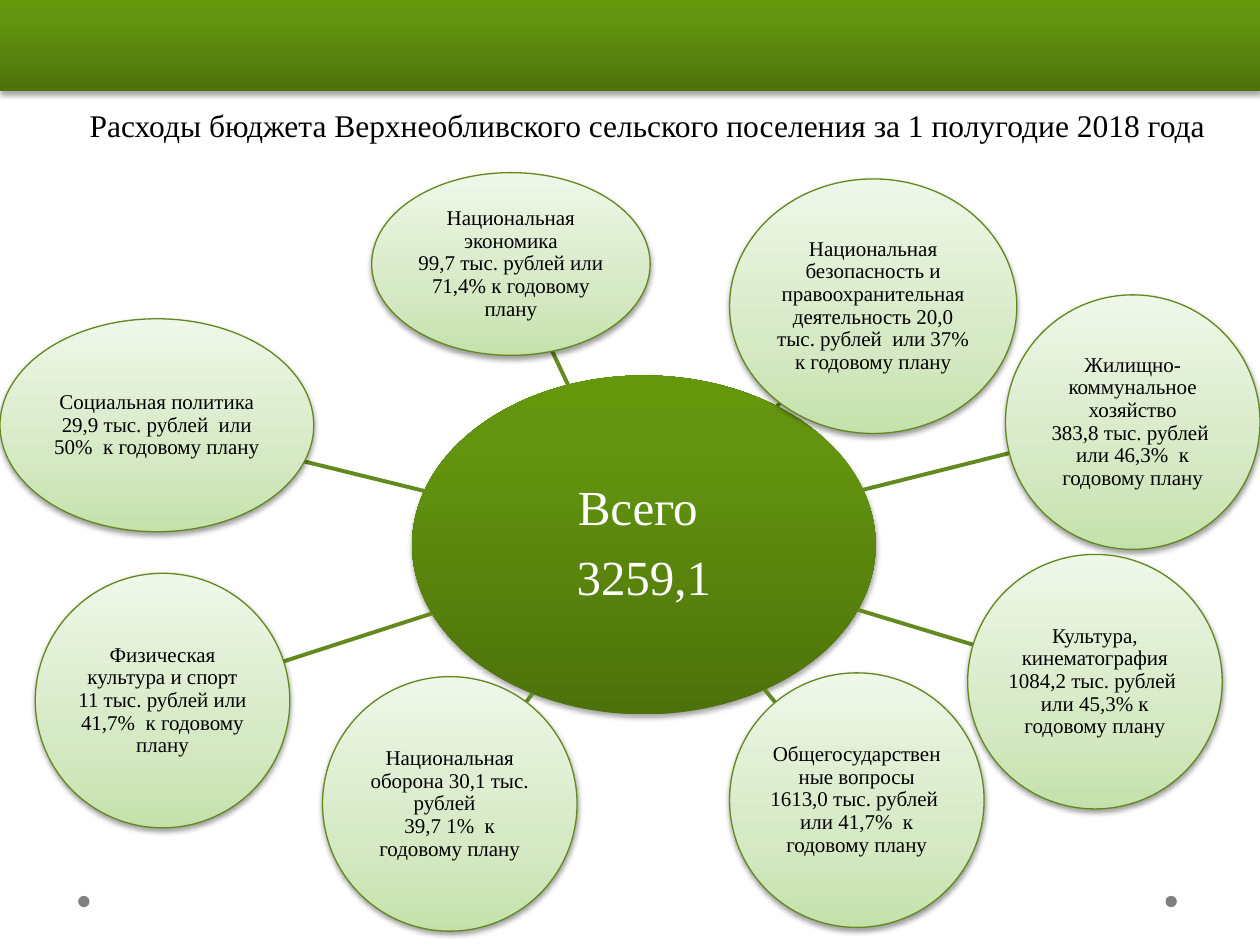
import math

import lxml.etree
import pptx
import pptx.dml.color
import pptx.enum.shapes
import pptx.enum.text
import pptx.oxml.ns
import pptx.util
from pptx.util import Inches

COLORS = {
    "dark": "4D720B", "mid": "64940F", "bright": "65970C",
    "leaf": "C5E1AB", "mist": "D6E9C5", "pale": "EFF7E9",
    "outline": "62891C", "spoke": "63891F",
    "dot": "808080", "text": "000000", "white": "FFFFFF",
}
GREEN = [(0, "dark"), (80, "mid"), (100, "bright")]
LIGHT = [(0, "leaf"), (35, "mist"), (100, "pale")]
FONT = "Times New Roman"
SHAPES = pptx.enum.shapes.MSO_SHAPE
ANCHORS = pptx.enum.text.MSO_ANCHOR

HUB = (3.27, 2.98, 3.68, 2.69)
BUBBLES = [
    ((2.95, 1.37, 2.21, 1.45),
     ["Национальная экономика", "99,7 тыс. рублей или 71,4% к годовому плану"]),
    ((5.79, 1.42, 2.28, 2.02),
     ["Национальная безопасность и правоохранительная деятельность 20,0 тыс. рублей  "
      "или 37% к годовому плану"]),
    ((7.98, 2.34, 2.02, 2.02),
     ["Жилищно-коммунальное хозяйство", "383,8 тыс. рублей  или 46,3%  к годовому плану"]),
    ((7.68, 4.4, 2.02, 2.02),
     ["Культура, кинематография", "1084,2 тыс. рублей  или 45,3% к годовому плану"]),
    ((5.79, 5.34, 2.02, 2.02),
     ["Общегосударственные вопросы", "1613,0 тыс. рублей  или 41,7%  к годовому плану"]),
    ((2.56, 5.37, 2.02, 2.02),
     ["Национальная оборона 30,1 тыс. рублей  ", "39,7 1%  к годовому плану"]),
    ((0.28, 4.55, 2.02, 2.02),
     ["Физическая культура и спорт", "11 тыс. рублей или 41,7%  к годовому плану"]),
    ((0, 2.53, 2.49, 1.69),
     ["Социальная политика", "29,9 тыс. рублей  или 50%  к годовому плану"]),
]


def rgb(name):
    return pptx.dml.color.RGBColor.from_string(COLORS[name])


def add_xml(parent, tag, **attributes):
    return lxml.etree.SubElement(parent, pptx.oxml.ns.qn(tag), attributes)


def add_color(parent, name):
    return add_xml(parent, "a:srgbClr", val=COLORS[name])


def fill_gradient(shape, stops):
    """Fill from the bottom up with any number of (percent, colour) stops."""
    shape.fill.gradient()
    shape.fill.gradient_angle = 90
    stop_list = shape._element.spPr.find(".//" + pptx.oxml.ns.qn("a:gsLst"))
    for stop in list(stop_list):
        stop_list.remove(stop)
    for percent, color in stops:
        add_color(add_xml(stop_list, "a:gs", pos=str(percent * 1000)), color)


def add_shadow(shape, distance, opacity):
    effects = shape._element.spPr.find(pptx.oxml.ns.qn("a:effectLst"))
    shadow = add_xml(effects, "a:outerShdw", blurRad=str(pptx.util.Pt(3.1)),
                     dist=str(pptx.util.Pt(distance)), dir="5400000", rotWithShape="0")
    add_xml(add_color(shadow, "text"), "a:alpha", val=str(opacity * 1000))


def add_plain_shape(slide, kind, bounds):
    shape = slide.shapes.add_shape(kind, *map(Inches, bounds))
    shape.shadow.inherit = False
    shape.line.fill.background()
    return shape


def add_green_shape(slide, kind, bounds):
    shape = add_plain_shape(slide, kind, bounds)
    fill_gradient(shape, GREEN)
    add_shadow(shape, 1.8, 35)
    return shape


def write_text(box, lines, size, color="text", spacing=1.0, gap=0, anchor=ANCHORS.MIDDLE,
               inset=None):
    frame = box.text_frame
    formats = {"word_wrap": True, "vertical_anchor": anchor}
    if inset is not None:
        sides = ("left", "right", "top", "bottom")
        formats.update({f"margin_{side}": Inches(inset) for side in sides})
    for name, value in formats.items():
        setattr(frame, name, value)
    for index, line in enumerate(lines):
        para = frame.paragraphs[0] if index == 0 else frame.add_paragraph()
        para.alignment = pptx.enum.text.PP_ALIGN.CENTER
        para.line_spacing = spacing
        if index < len(lines) - 1:
            para.space_after = pptx.util.Pt(gap)
        span = para.add_run()
        span.text = line
        for name, value in {"name": FONT, "size": pptx.util.Pt(size)}.items():
            setattr(span.font, name, value)
        span.font.color.rgb = rgb(color)


def center(bounds):
    left, top, width, height = bounds
    return left + width / 2, top + height / 2


def edge_point(bounds, target):
    """Point where the ray from an ellipse's centre to target leaves the ellipse."""
    x, y = center(bounds)
    dx, dy = target[0] - x, target[1] - y
    reach = 1 / math.hypot(dx / (bounds[2] / 2), dy / (bounds[3] / 2))
    return x + dx * reach, y + dy * reach


def add_spoke(slide, bounds):
    ends = edge_point(HUB, center(bounds)) + edge_point(bounds, center(HUB))
    spoke = slide.shapes.add_connector(
        pptx.enum.shapes.MSO_CONNECTOR.STRAIGHT, *map(Inches, ends))
    spoke.line.color.rgb = rgb("spoke")
    spoke.line.width = pptx.util.Pt(2.25)
    add_xml(spoke._element.spPr, "a:effectLst")


def add_bubble(slide, bounds, lines):
    bubble = add_plain_shape(slide, SHAPES.OVAL, bounds)
    fill_gradient(bubble, LIGHT)
    bubble.line.color.rgb = rgb("outline")
    bubble.line.width = pptx.util.Pt(0.75)
    add_shadow(bubble, 1.6, 38)
    write_text(bubble, lines, 12, spacing=0.9, inset=0.01)


def add_dot(slide, left):
    dot = add_plain_shape(slide, SHAPES.OVAL, (left, 7.11, 0.09, 0.09))
    dot.fill.solid()
    dot.fill.fore_color.rgb = rgb("dot")


def add_title(slide, text):
    box = slide.shapes.add_textbox(*map(Inches, (0.28, 0.72, 9.72, 0.47)))
    write_text(box, [text], 18, anchor=ANCHORS.BOTTOM)


def main():
    deck = pptx.Presentation()
    deck.slide_width, deck.slide_height = Inches(10), Inches(7.5)
    slide = deck.slides.add_slide(deck.slide_layouts[6])
    for left in (0.62, 9.25):
        add_dot(slide, left)
    hub = add_green_shape(slide, SHAPES.OVAL, HUB)
    write_text(hub, ["Всего ", "3259,1"], 28, "white", spacing=0.9, gap=9.8, inset=0.02)
    for bounds, lines in BUBBLES:
        add_spoke(slide, bounds)
        add_bubble(slide, bounds, lines)
    add_title(slide, "Расходы бюджета Верхнеобливского сельского поселения за 1 полугодие 2018 года")
    add_green_shape(slide, SHAPES.RECTANGLE, (0, 0, 10, 0.72))
    deck.save("out.pptx")


if __name__ == "__main__":
    main()
